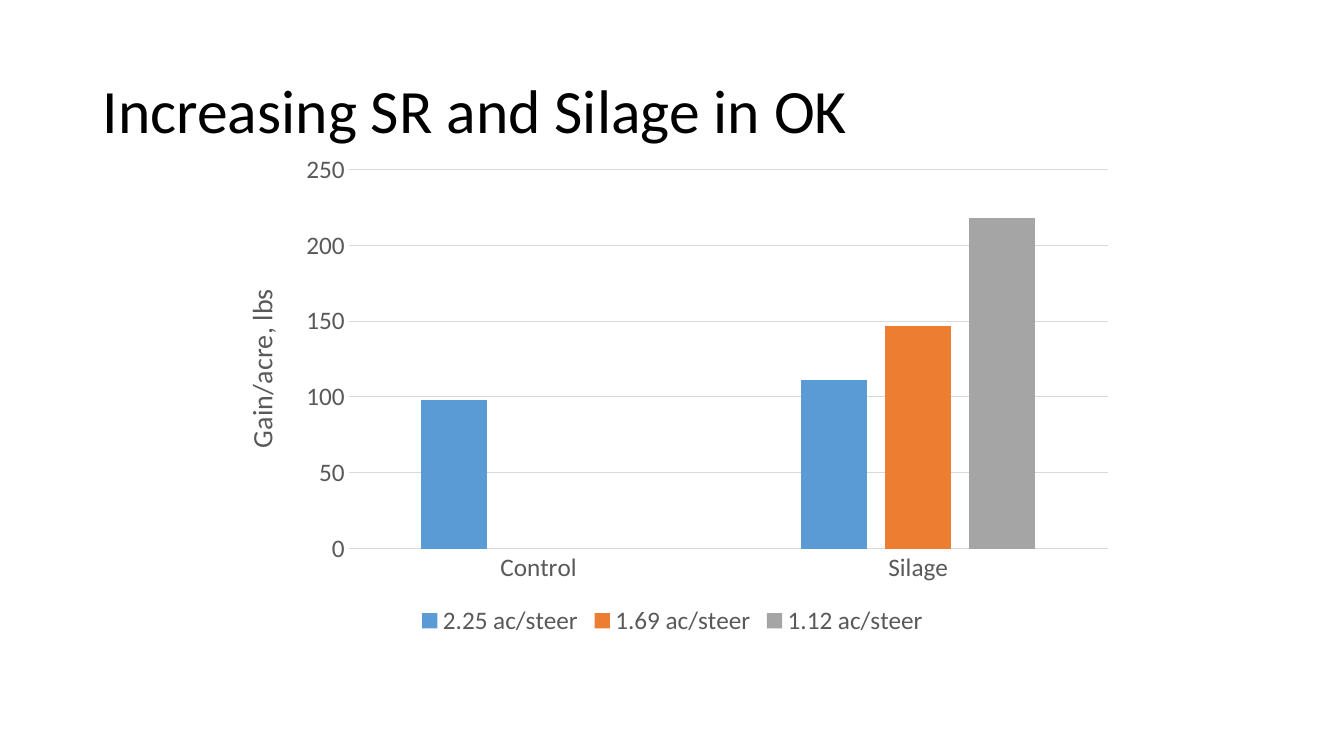
from dataclasses import dataclass
from typing import Optional

from pptx import Presentation
from pptx.chart.data import CategoryChartData
from pptx.dml.color import RGBColor
from pptx.dml.line import LineFormat
from pptx.enum.chart import XL_CHART_TYPE, XL_LEGEND_POSITION, XL_TICK_MARK
from pptx.enum.text import MSO_ANCHOR, MSO_AUTO_SIZE, PP_ALIGN
from pptx.text.text import Font
from pptx.util import Inches, Pt

FONT_NAME = "Calibri"
BLACK = "000000"
LABEL_GREY = "595959"
LINE_GREY = "D9D9D9"


@dataclass(frozen=True)
class StockingRate:
    name: str
    gains: tuple[Optional[int], ...]
    color: str


FEEDS = ("Control", "Silage")
STOCKING_RATES = (
    StockingRate("2.25 ac/steer", (98, 111), "5B9BD5"),
    StockingRate("1.69 ac/steer", (None, 147), "ED7D31"),
    StockingRate("1.12 ac/steer", (None, 218), "A5A5A5"),
)


def rgb(color: str) -> RGBColor:
    return RGBColor.from_string(color)


def style_font(font: Font, size: float, color: str) -> None:
    font.name = FONT_NAME
    font.size = Pt(size)
    font.bold = False
    font.color.rgb = rgb(color)


def style_line(line: LineFormat) -> None:
    line.color.rgb = rgb(LINE_GREY)
    line.width = Pt(0.75)


def add_title(slide, text: str) -> None:
    title = slide.shapes.title
    title.left, title.top = Inches(0.92), Inches(0.4)
    title.width, title.height = Inches(11.5), Inches(1.45)
    text_frame = title.text_frame
    text_frame.text = text
    text_frame.word_wrap = True
    text_frame.auto_size = MSO_AUTO_SIZE.NONE
    text_frame.vertical_anchor = MSO_ANCHOR.MIDDLE
    paragraph = text_frame.paragraphs[0]
    paragraph.alignment = PP_ALIGN.LEFT
    paragraph.line_spacing = 0.9
    style_font(paragraph.runs[0].font, 44, BLACK)


def add_gain_chart(slide) -> None:
    data = CategoryChartData()
    data.categories = FEEDS
    for rate in STOCKING_RATES:
        data.add_series(rate.name, rate.gains)
    chart = slide.shapes.add_chart(
        XL_CHART_TYPE.COLUMN_CLUSTERED,
        Inches(2.17), Inches(1.43), Inches(9), Inches(4.93), data,
    ).chart
    chart.has_title = False
    style_font(chart.font, 10, BLACK)

    # Columns
    plot = chart.plots[0]
    plot.gap_width = 219
    plot.overlap = -27
    plot.vary_by_categories = False
    for series, rate in zip(plot.series, STOCKING_RATES):
        series.format.fill.solid()
        series.format.fill.fore_color.rgb = rgb(rate.color)

    # Axes
    feed_axis, gain_axis = chart.category_axis, chart.value_axis
    for axis in (feed_axis, gain_axis):
        axis.major_tick_mark = XL_TICK_MARK.NONE
        axis.minor_tick_mark = XL_TICK_MARK.NONE
        style_font(axis.tick_labels.font, 18, LABEL_GREY)
    style_line(feed_axis.format.line)
    gain_axis.format.line.fill.background()
    gain_axis.minimum_scale, gain_axis.maximum_scale = 0, 250
    gain_axis.major_unit = 50
    gain_axis.has_major_gridlines = True
    style_line(gain_axis.major_gridlines.format.line)
    axis_title = gain_axis.axis_title.text_frame
    axis_title.text = "Gain/acre, lbs"
    style_font(axis_title.paragraphs[0].runs[0].font, 20, LABEL_GREY)

    # Legend
    chart.has_legend = True
    chart.legend.position = XL_LEGEND_POSITION.BOTTOM
    chart.legend.include_in_layout = False
    style_font(chart.legend.font, 18, LABEL_GREY)


def main() -> None:
    presentation = Presentation()
    presentation.slide_width = Inches(13.33)
    presentation.slide_height = Inches(7.5)
    title_only = presentation.slide_layouts[5]
    slide = presentation.slides.add_slide(title_only)
    add_title(slide, "Increasing SR and Silage in OK")
    add_gain_chart(slide)
    presentation.save("out.pptx")


if __name__ == "__main__":
    main()
